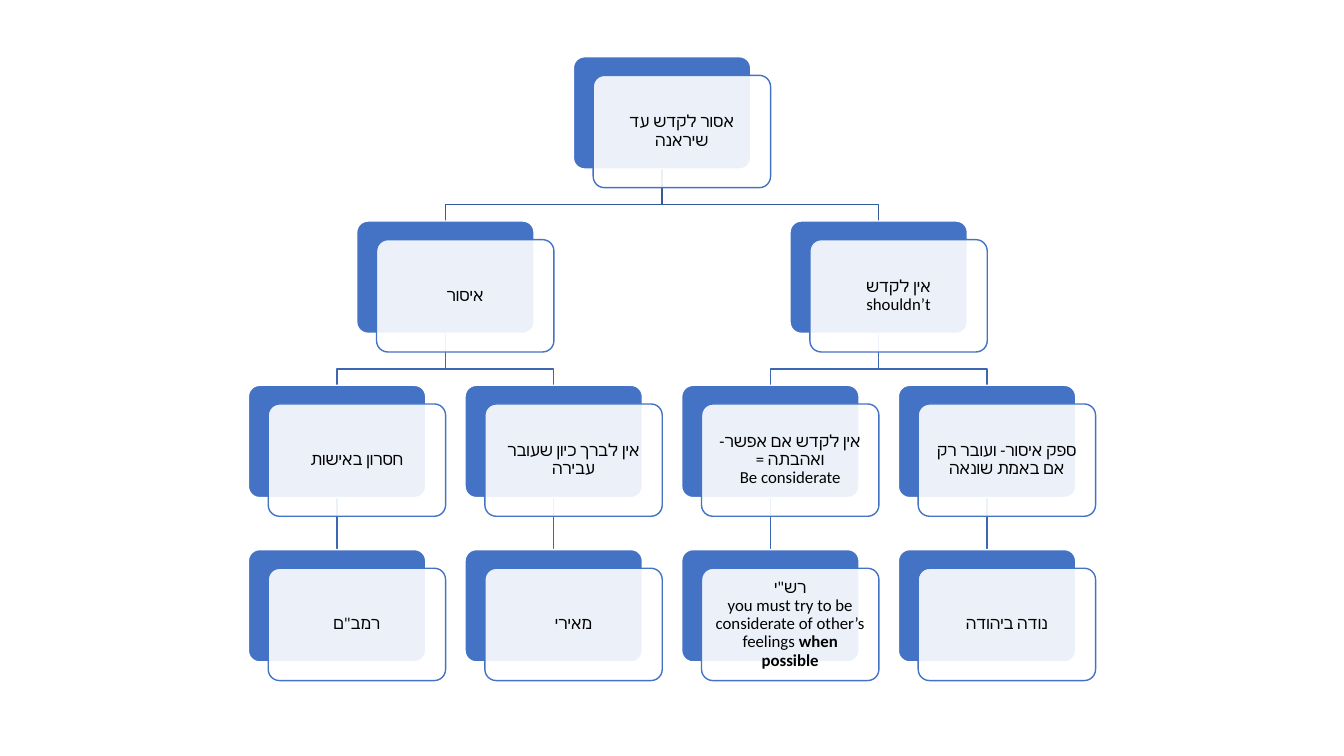
from lxml import etree
from pptx import Presentation
from pptx import util as u
from pptx.dml.color import RGBColor
from pptx.enum import shapes, text
from pptx.oxml.ns import qn

COLORS = {"blue": "4472C4", "white": "FFFFFF", "black": "000000",
          "top_link": "365B9D", "link": "3E67B2"}
FONT = "Calibri"

# key: (column in half steps, row, parent, lines of (text, bold) runs)
NODES = {
    "root": (3, 0, None, [[("אסור לקדש עד שיראנה", False)]]),
    "forbidden": (1, 1, "root", [[("איסור", False)]]),
    "shouldnt": (5, 1, "root", [[("אין לקדש", False)], [("shouldn’t", False)]]),
    "lack": (0, 2, "forbidden", [[("חסרון באישות", False)]]),
    "blessing": (2, 2, "forbidden", [[("אין לברך כיון שעובר עבירה", False)]]),
    "love": (4, 2, "shouldnt", [[("אין לקדש אם אפשר- ואהבתה =", False)],
                                [("Be considerate", False)]]),
    "doubt": (6, 2, "shouldnt", [[("ספק איסור- ועובר רק אם באמת שונאה", False)]]),
    "rambam": (0, 3, "lack", [[("רמב\"ם", False)]]),
    "meiri": (2, 3, "blessing", [[("מאירי", False)]]),
    "rashi": (4, 3, "love", [[("רש\"י", False)],
                             [("you must try to be considerate of other’s feelings ", False),
                              ("when possible", True)]]),
    "noda": (6, 3, "doubt", [[("נודה ביהודה", False)]]),
}

LEFT, TOP = u.Cm(6.26), u.Cm(1.43)
HALF_STEP, ROW_STEP = u.Cm(2.73), u.Cm(4.14)
CARD_W, CARD_H = u.Cm(4.47), u.Cm(2.83)
SHIFT_X, SHIFT_Y = u.Cm(0.5), u.Cm(0.47)
BEND = u.Cm(0.41)
INSET = u.Cm(0.21)


def rgb(name):
    return RGBColor.from_string(COLORS[name])


def corner(key):
    col, row = NODES[key][:2]
    return LEFT + col * HALF_STEP, TOP + row * ROW_STEP


def set_line(sp, color):
    sp.line.color.rgb = rgb(color)
    sp.line.width = u.Pt(1)


def add_link(s, parent, child):
    px, py = corner(parent)
    cx, cy = corner(child)
    x1, y1, x2 = px + CARD_W // 2, py + CARD_H, cx + CARD_W // 2
    if x1 == x2:
        sp = s.shapes.add_connector(shapes.MSO_CONNECTOR.STRAIGHT, x1, y1, x2, cy)
        etree.SubElement(sp._element.spPr, qn("a:effectLst"))
    else:
        fb = s.shapes.build_freeform(x1, y1)
        fb.add_line_segments([(x1, cy - BEND), (x2, cy - BEND), (x2, cy)], close=False)
        sp = fb.convert_to_shape()
        sp.fill.background()
        sp.shadow.inherit = False
    set_line(sp, "top_link" if parent == "root" else "link")


def add_card(s, x, y, fill, line):
    sp = s.shapes.add_shape(shapes.MSO_SHAPE.ROUNDED_RECTANGLE, x, y, CARD_W, CARD_H)
    sp.adjustments[0] = 0.1
    sp.shadow.inherit = False
    sp.fill.solid()
    sp.fill.fore_color.rgb = rgb(fill)
    set_line(sp, line)
    return sp


def write(sp, lines):
    tf = sp.text_frame
    tf.word_wrap = True
    tf.vertical_anchor = text.MSO_ANCHOR.MIDDLE
    tf.margin_left = tf.margin_right = tf.margin_top = tf.margin_bottom = INSET
    p = tf.paragraphs[0]
    p.alignment = text.PP_ALIGN.CENTER
    p.line_spacing = 0.9
    p._p.get_or_add_pPr().set("rtl", "1")
    for i, runs in enumerate(lines):
        if i:
            p.add_line_break()
        for words, bold in runs:
            r = p.add_run()
            r.text = words
            r.font.name = FONT
            r.font.size = u.Pt(12)
            r.font.bold = bold
            r.font.color.rgb = rgb("black")
            etree.SubElement(r._r.get_or_add_rPr(), qn("a:cs"), typeface=FONT)


def main():
    prs = Presentation()
    prs.slide_width, prs.slide_height = u.Cm(33.87), u.Cm(19.05)
    s = prs.slides.add_slide(prs.slide_layouts[6])
    for key, (_, _, parent, _) in NODES.items():
        if parent:
            add_link(s, parent, key)
    for key, (_, _, _, lines) in NODES.items():
        x, y = corner(key)
        add_card(s, x, y, "blue", "white")
        front = add_card(s, x + SHIFT_X, y + SHIFT_Y, "white", "blue")
        clr = front._element.spPr.find(qn("a:solidFill"))[0]
        etree.SubElement(clr, qn("a:alpha"), val="90000")
        write(front, lines)
    prs.save("out.pptx")


if __name__ == "__main__":
    main()
